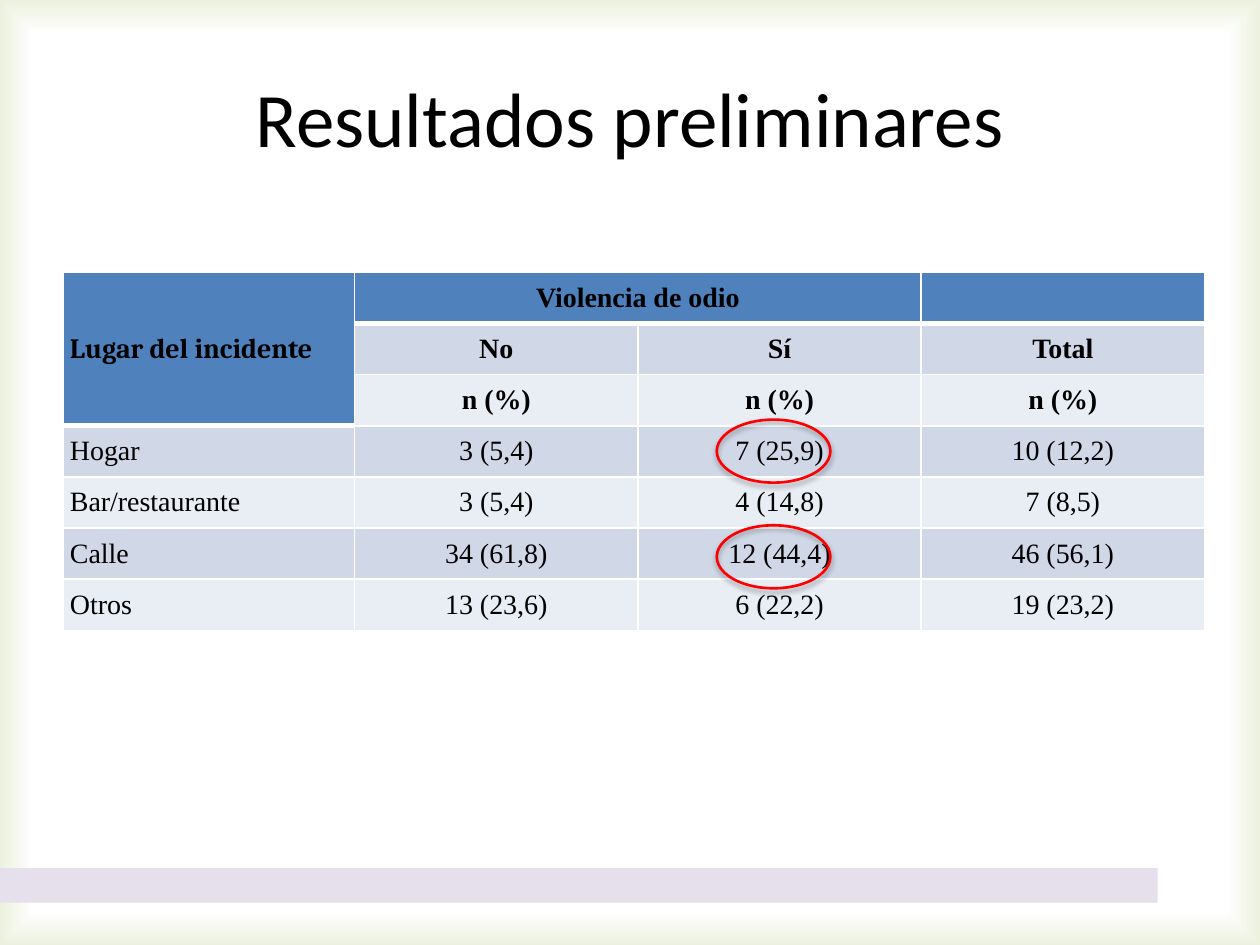
from lxml import etree
from pptx import Presentation
from pptx.dml.color import RGBColor
from pptx.enum.shapes import MSO_SHAPE
from pptx.enum.text import MSO_ANCHOR, PP_ALIGN
from pptx.oxml import parse_xml
from pptx.oxml.ns import qn
from pptx.util import Cm, Pt

CENTER, LEFT = PP_ALIGN.CENTER, PP_ALIGN.LEFT
MIDDLE = MSO_ANCHOR.MIDDLE
RECTANGLE, OVAL = MSO_SHAPE.RECTANGLE, MSO_SHAPE.OVAL
NAMESPACE = 'xmlns:a="http://schemas.openxmlformats.org/drawingml/2006/main"'

HEADER_ROWS = 3
HEADER_FILL = "4F81BD"
BAND_FILLS = ("E9EDF4", "D0D8E8")
ROWS = [
    ("Lugar del incidente", "Violencia de odio", "", ""),
    ("", "No", "Sí", "Total"),
    ("", "n (%)", "n (%)", "n (%)"),
    ("Hogar", "3 (5,4)", "7 (25,9)", "10 (12,2)"),
    ("Bar/restaurante", "3 (5,4)", "4 (14,8)", "7 (8,5)"),
    ("Calle", "34 (61,8)", "12 (44,4)", "46 (56,1)"),
    ("Otros", "13 (23,6)", "6 (22,2)", "19 (23,2)"),
]


def color(hex_code):
    """Return the colour for a hex string."""
    return RGBColor.from_string(hex_code)


def paint_background(slide):
    """Fill the slide with white fading to pale green at the edges."""
    fill = slide.background.fill
    fill.gradient()
    gradient = slide.element.find(".//" + qn("a:gradFill"))
    for child in list(gradient):
        gradient.remove(child)
    gradient.append(parse_xml(
        f'<a:gsLst {NAMESPACE}>'
        '<a:gs pos="93000"><a:srgbClr val="FFFFFF"><a:alpha val="70000"/></a:srgbClr></a:gs>'
        '<a:gs pos="100000"><a:srgbClr val="EBF1DE"/></a:gs></a:gsLst>'))
    gradient.append(parse_xml(
        f'<a:path {NAMESPACE} path="rect">'
        '<a:fillToRect l="50000" t="50000" r="50000" b="50000"/></a:path>'))


def add_footer_band(slide, left, top, width, height):
    """Draw the lilac band near the bottom."""
    band = slide.shapes.add_shape(RECTANGLE, left, top, width, height)
    band.shadow.inherit = False
    band.fill.solid()
    band.fill.fore_color.rgb = color("E6E0EC")
    band.line.fill.background()


def set_title(slide, text, left, top, width, height):
    """Place and format the title placeholder."""
    title = slide.shapes.title
    title.left, title.top, title.width, title.height = left, top, width, height
    frame = title.text_frame
    frame.text = text
    frame.vertical_anchor = MIDDLE
    paragraph = frame.paragraphs[0]
    paragraph.alignment = CENTER
    paragraph.font.name = "Calibri"
    paragraph.font.size = Pt(44)
    paragraph.font.color.rgb = color("000000")


def set_borders(cell, bottom_width):
    """Give a cell white borders, with its own width at the bottom."""
    properties = cell._tc.get_or_add_tcPr()
    for side, width in (("L", 1), ("R", 1), ("T", 1), ("B", bottom_width)):
        line = etree.SubElement(properties, qn(f"a:ln{side}"), w=str(Pt(width)))
        solid = etree.SubElement(line, qn("a:solidFill"))
        etree.SubElement(solid, qn("a:srgbClr"), val="FFFFFF")


def format_cell(cell, text, row, column):
    """Write one table cell and style it by its position."""
    is_header = row == 0 or (column == 0 and row < HEADER_ROWS)
    set_borders(cell, 3 if is_header else 1)
    cell.fill.solid()
    cell.fill.fore_color.rgb = color(HEADER_FILL if is_header else BAND_FILLS[row % 2])
    cell.vertical_anchor = MIDDLE
    cell.margin_left = cell.margin_right = Cm(0.13)
    cell.margin_top = cell.margin_bottom = 0
    cell.text = text
    paragraph = cell.text_frame.paragraphs[0]
    paragraph.alignment = LEFT if column == 0 else CENTER
    font = paragraph.font
    font.name = "Cambria" if is_header and column == 0 else "Times New Roman"
    font.size = Pt(16)
    font.bold = row < HEADER_ROWS
    font.color.rgb = color("000000")


def add_results_table(slide, left, top, width, height):
    """Build the table of incidents by place and hate violence."""
    table = slide.shapes.add_table(len(ROWS), len(ROWS[0]), left, top, width, height).table
    label_width = Cm(5.87)
    table.columns[0].width = label_width
    for column in range(1, len(ROWS[0])):
        table.columns[column].width = (width - label_width) // (len(ROWS[0]) - 1)
    for row, texts in enumerate(ROWS):
        table.rows[row].height = height // len(ROWS)
        for column, text in enumerate(texts):
            format_cell(table.cell(row, column), text, row, column)
    table.cell(0, 0).merge(table.cell(HEADER_ROWS - 1, 0))
    table.cell(0, 1).merge(table.cell(0, 2))


def add_highlight(slide, left, top, width, height):
    """Circle a value with a red, softly shadowed ellipse."""
    ellipse = slide.shapes.add_shape(OVAL, left, top, width, height)
    ellipse.fill.background()
    ellipse.line.color.rgb = color("FF0000")
    ellipse.line.width = Pt(1.5)
    ellipse.shadow.inherit = False
    effects = ellipse.element.spPr.find(qn("a:effectLst"))
    effects.append(parse_xml(
        f'<a:outerShdw {NAMESPACE} blurRad="{Pt(3.1)}" dist="{Pt(1.8)}" dir="5400000" '
        'rotWithShape="0"><a:srgbClr val="000000"><a:alpha val="35000"/></a:srgbClr>'
        '</a:outerShdw>'))


def main():
    """Build and save the presentation."""
    presentation = Presentation()
    presentation.slide_width, presentation.slide_height = Cm(25.4), Cm(19.05)
    slide = presentation.slides.add_slide(presentation.slide_layouts[5])
    paint_background(slide)
    add_footer_band(slide, 0, Cm(17.5), Cm(23.34), Cm(0.7))
    set_title(slide, "Resultados preliminares", Cm(1.27), Cm(0.76), Cm(22.86), Cm(3.18))
    add_results_table(slide, Cm(1.28), Cm(5.49), Cm(23), Cm(7.22))
    for top in (10.59, 8.46):
        add_highlight(slide, Cm(14.45), Cm(top), Cm(2.29), Cm(1.27))
    presentation.save("out.pptx")


if __name__ == "__main__":
    main()
